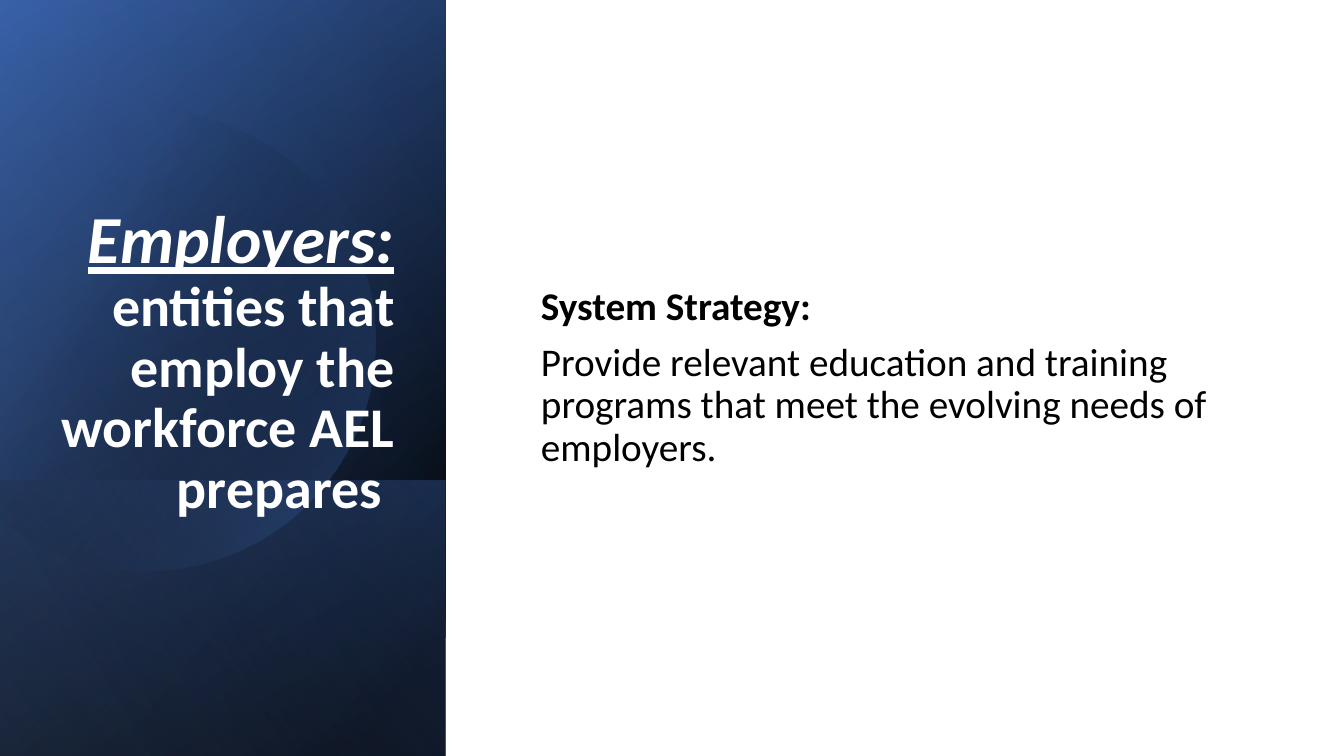
import math
from dataclasses import dataclass

import pptx
import pptx.dml.color
import pptx.enum.shapes
import pptx.enum.text
import pptx.oxml
import pptx.oxml.ns
import pptx.util

COLORS = {
    "black": "000000", "white": "FFFFFF", "navy": "2F5597",
    "blue": "4472C4", "pale": "8FAADC",
}
FONT = "Calibri"
W, H = pptx.util.Inches(13.33), pptx.util.Inches(7.5)
SIDEBAR = 0.3316  # share of the slide's width


@dataclass
class Stop:
    position: float
    color: str
    opacity: int = 100


@dataclass
class Layer:
    """Band of the sidebar, from a share of the height down to the bottom."""
    top: float
    angle: int
    stops: tuple[Stop, Stop]


LAYERS = [
    Layer(0, 50, (Stop(0.08, "black"), Stop(1, "navy"))),
    Layer(0, 30, (Stop(0, "black", 0), Stop(0.99, "blue", 46))),
    Layer(0.635, 130, (Stop(0.02, "blue", 29), Stop(1, "black", 30))),
]
DISC_STOPS = (Stop(0.29, "black", 0), Stop(1, "blue", 43))
SHEEN = Layer(0, 120, (Stop(0, "black", 0), Stop(0.99, "pale", 11)))


def rgb(name: str) -> pptx.dml.color.RGBColor:
    return pptx.dml.color.RGBColor.from_string(COLORS[name])


def fill_gradient(sp, stops: tuple[Stop, Stop], angle: int) -> None:
    sp.shadow.inherit = False
    sp.line.fill.background()
    sp.fill.gradient()
    sp.fill.gradient_angle = 360 - angle  # the setter counts anticlockwise
    for target, stop in zip(sp.fill.gradient_stops, stops):
        target.position = stop.position
        target.color.rgb = rgb(stop.color)
    # Opacity of each stop
    gradient = sp.element.spPr.find(pptx.oxml.ns.qn("a:gradFill"))
    for clr, stop in zip(gradient.iter(pptx.oxml.ns.qn("a:srgbClr")), stops):
        alpha = pptx.oxml.parse_xml(f"<a:alpha {pptx.oxml.ns.nsdecls('a')}/>")
        alpha.set("val", str(stop.opacity * 1000))
        clr.append(alpha)


def add_layer(shapes, layer: Layer) -> None:
    """Add a band lying on its side, mirrored and turned upright."""
    width, height = int(W * SIDEBAR), int(H * (1 - layer.top))
    mid_x, mid_y = width // 2, int(H * layer.top) + height // 2
    sp = shapes.add_shape(
        pptx.enum.shapes.MSO_SHAPE.RECTANGLE,
        mid_x - height // 2, mid_y - width // 2, height, width)
    sp.rotation = 90
    sp.element.spPr.find(pptx.oxml.ns.qn("a:xfrm")).set("flipH", "1")
    fill_gradient(sp, layer.stops, layer.angle)


def add_disc(shapes) -> None:
    """Add a disc cut off by the slide's left edge."""
    cx, cy, radius = W * 0.108, H * 0.45, H * 0.305
    limit = math.acos(-cx / radius)
    steps = 90
    angles = [limit * (2 * i / steps - 1) for i in range(steps + 1)]
    points = [(round(cx + radius * math.cos(a)), round(cy + radius * math.sin(a)))
              for a in angles]
    builder = shapes.build_freeform(*points[0])
    builder.add_line_segments(points[1:], close=True)
    fill_gradient(builder.convert_to_shape(), DISC_STOPS, 30)


def place(sp, left: float, top: float, width: float, height: float, anchor) -> None:
    """Move a placeholder to shares of the slide's size, in front of the rest."""
    sp.left, sp.top = int(W * left), int(H * top)
    sp.width, sp.height = int(W * width), int(H * height)
    tf = sp.text_frame
    tf.word_wrap = True
    tf.auto_size = pptx.enum.text.MSO_AUTO_SIZE.NONE
    tf.vertical_anchor = anchor
    sp.element.getparent().append(sp.element)


def style_run(r, size: int, color: str, bold: bool, accent: bool = False) -> None:
    r.font.name, r.font.size = FONT, pptx.util.Pt(size)
    r.font.color.rgb = rgb(color)
    r.font.bold, r.font.italic, r.font.underline = bold, accent, accent


def main() -> None:
    prs = pptx.Presentation()
    prs.slide_width, prs.slide_height = W, H
    slide = prs.slides.add_slide(prs.slide_layouts[1])

    # Sidebar
    for layer in LAYERS:
        add_layer(slide.shapes, layer)
    add_disc(slide.shapes)
    add_layer(slide.shapes, SHEEN)

    # Title
    title = slide.shapes.title
    place(title, 0.038, 0.085, 0.263, 0.61, pptx.enum.text.MSO_ANCHOR.BOTTOM)
    p = title.text_frame.paragraphs[0]
    p.text = "Employers:\ventities that employ the workforce AEL prepares "
    p.alignment = pptx.enum.text.PP_ALIGN.RIGHT
    p.line_spacing = 0.9
    heading, definition = p.runs
    style_run(heading, 48, "white", bold=True, accent=True)
    style_run(definition, 40, "white", bold=True)

    # Strategy
    body = slide.placeholders[1]
    place(body, 0.395, 0.095, 0.538, 0.81, pptx.enum.text.MSO_ANCHOR.MIDDLE)
    body.text_frame.text = (
        "System Strategy:\nProvide relevant education and training programs "
        "that meet the evolving needs of employers.")
    for i, p in enumerate(body.text_frame.paragraphs):
        p.line_spacing = 0.9
        p.space_before = pptx.util.Pt(10)
        pPr = p._p.get_or_add_pPr()
        pPr.set("marL", "0")
        pPr.set("indent", "0")
        pPr.append(pptx.oxml.parse_xml(f"<a:buNone {pptx.oxml.ns.nsdecls('a')}/>"))
        style_run(p.runs[0], 28, "black", bold=i == 0)

    prs.save("out.pptx")


if __name__ == "__main__":
    main()
